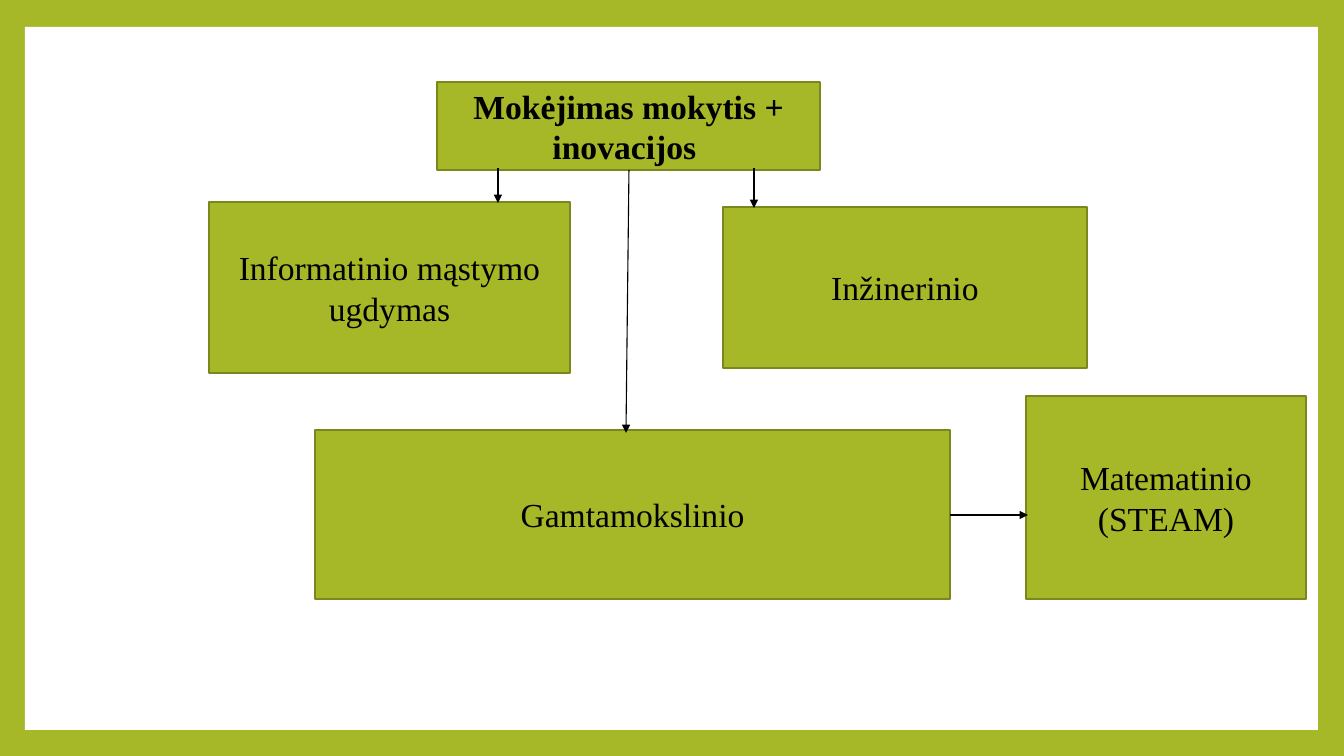
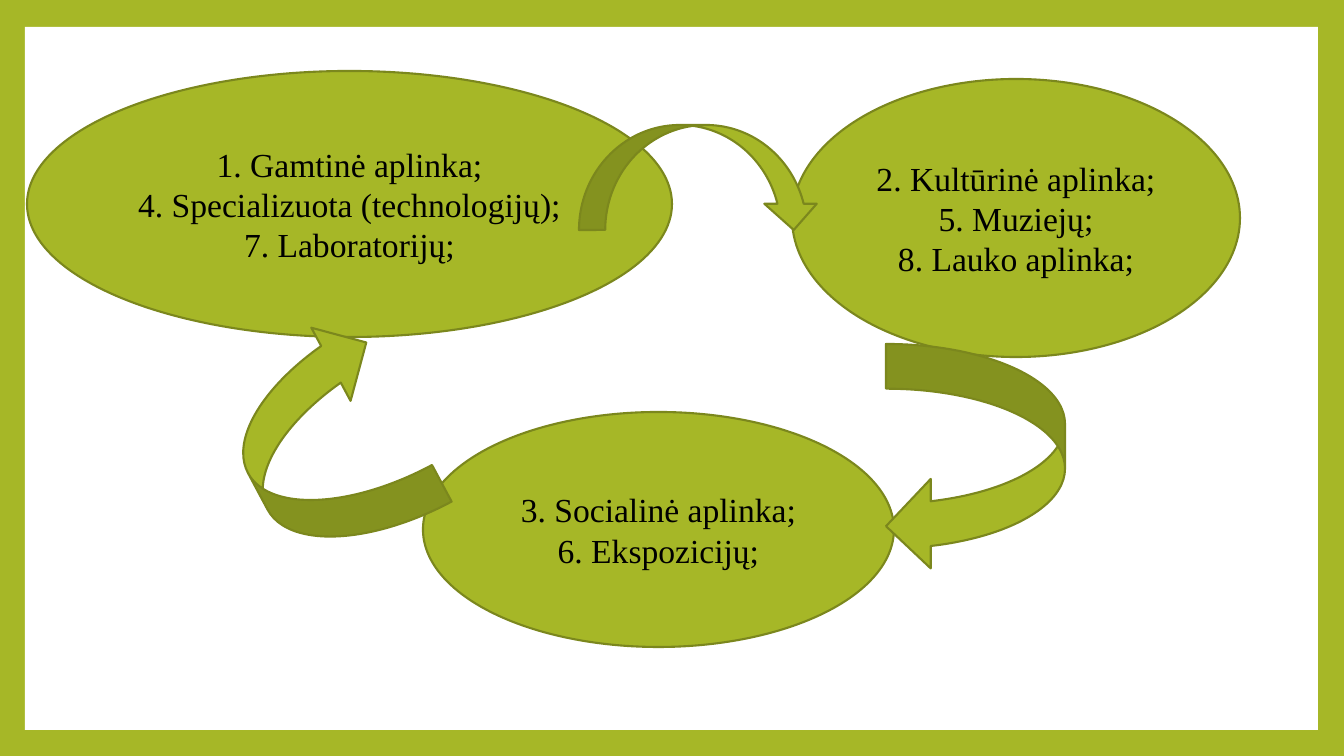
from lxml import etree
from pptx import Presentation
from pptx.dml.color import RGBColor
from pptx.enum.shapes import MSO_CONNECTOR, MSO_SHAPE
from pptx.enum.text import MSO_ANCHOR, PP_ALIGN
from pptx.oxml.ns import qn
from pptx.util import Pt

RECTANGLE = MSO_SHAPE.RECTANGLE
OVAL = MSO_SHAPE.OVAL
CURVED_DOWN = MSO_SHAPE.CURVED_DOWN_ARROW
CURVED_LEFT = MSO_SHAPE.CURVED_LEFT_ARROW
CURVED_UP = MSO_SHAPE.CURVED_UP_ARROW
STRAIGHT = MSO_CONNECTOR.STRAIGHT
CENTER = PP_ALIGN.CENTER
MIDDLE = MSO_ANCHOR.MIDDLE

OLIVE = RGBColor(0xA6, 0xB7, 0x27)
DARK_OLIVE = RGBColor(0x7B, 0x87, 0x1D)
WHITE = RGBColor(0xFF, 0xFF, 0xFF)
BLACK = RGBColor(0x00, 0x00, 0x00)

EMU_PER_PX = 914400 / 100.8
SLIDE_SIZE = (1344, 756)
PANEL = (25, 27, 1293, 703)
TEXT_FORMAT = {"name": "Times New Roman", "size": Pt(24)}

COMPETENCES = [
    (["Mokėjimas mokytis + inovacijos "], (437, 82, 383, 88), True),
    (["Informatinio mąstymo ugdymas"], (209, 202, 361, 171), False),
    (["Inžinerinio"], (723, 207, 364, 161), False),
    (["Gamtamokslinio"], (315, 430, 635, 169), False),
    (["Matematinio (STEAM)"], (1026, 396, 280, 203), False),
]
COMPETENCE_LINKS = [
    ((498, 168), (498, 203)),
    ((754, 168), (754, 208)),
    ((629, 170), (626, 433)),
    ((950, 515), (1028, 515)),
]

ENVIRONMENTS = [
    (["1. Gamtinė aplinka;", "4. Specializuota (technologijų);", "7. Laboratorijų;"],
     (27, 71, 645, 266)),
    (["2. Kultūrinė aplinka;", "5. Muziejų;", "8. Lauko aplinka;"],
     (792, 79, 448, 278)),
    (["3. Socialinė aplinka;", "6. Ekspozicijų;"],
     (423, 412, 471, 235)),
]
CYCLE_ARROWS = [
    (CURVED_DOWN, (579, 125, 241, 105), 0, False),
    (CURVED_LEFT, (886, 344, 179, 227), 0, False),
    (CURVED_UP, (215, 360, 222, 166), 241.8, True),
]


def px(*lengths):
    return [round(length * EMU_PER_PX) for length in lengths]


def add_figure(slide, preset, box, fill=OLIVE, outline=DARK_OLIVE):
    figure = slide.shapes.add_shape(preset, *px(*box))
    figure.shadow.inherit = False
    figure.fill.solid()
    figure.fill.fore_color.rgb = fill
    if outline is None:
        figure.line.fill.background()
    else:
        figure.line.color.rgb = outline
        figure.line.width = Pt(1.5)
    return figure


def add_label(figure, lines, bold=False):
    frame = figure.text_frame
    frame.word_wrap = True
    frame.vertical_anchor = MIDDLE
    frame.text = "\n".join(lines)
    for paragraph in frame.paragraphs:
        paragraph.alignment = CENTER
        for run in paragraph.runs:
            for key, value in {**TEXT_FORMAT, "bold": bold}.items():
                setattr(run.font, key, value)
            run.font.color.rgb = BLACK


def add_link(slide, start, end):
    link = slide.shapes.add_connector(STRAIGHT, *px(*start, *end))
    link.line.color.rgb = BLACK
    link.line.width = Pt(0.79)
    etree.SubElement(link.line._get_or_add_ln(), qn("a:tailEnd"), type="triangle")
    etree.SubElement(link._element.spPr, qn("a:effectLst"))


def add_framed_slide(deck):
    slide = deck.slides.add_slide(deck.slide_layouts[6])
    add_figure(slide, RECTANGLE, PANEL, WHITE, None)
    return slide


def build_competences(deck):
    slide = add_framed_slide(deck)
    for lines, box, bold in COMPETENCES:
        add_label(add_figure(slide, RECTANGLE, box), lines, bold)
    for start, end in COMPETENCE_LINKS:
        add_link(slide, start, end)


def build_environments(deck):
    slide = add_framed_slide(deck)
    for lines, box in ENVIRONMENTS:
        add_label(add_figure(slide, OVAL, box), lines)
    for preset, box, rotation, flipped in CYCLE_ARROWS:
        arrow = add_figure(slide, preset, box)
        arrow.rotation = rotation
        if flipped:
            arrow._element.spPr.find(qn("a:xfrm")).set("flipV", "1")


def main():
    deck = Presentation()
    deck.slide_width, deck.slide_height = px(*SLIDE_SIZE)
    backdrop = deck.slide_master.background.fill
    backdrop.solid()
    backdrop.fore_color.rgb = OLIVE
    build_competences(deck)
    build_environments(deck)
    deck.save("out.pptx")


if __name__ == "__main__":
    main()
